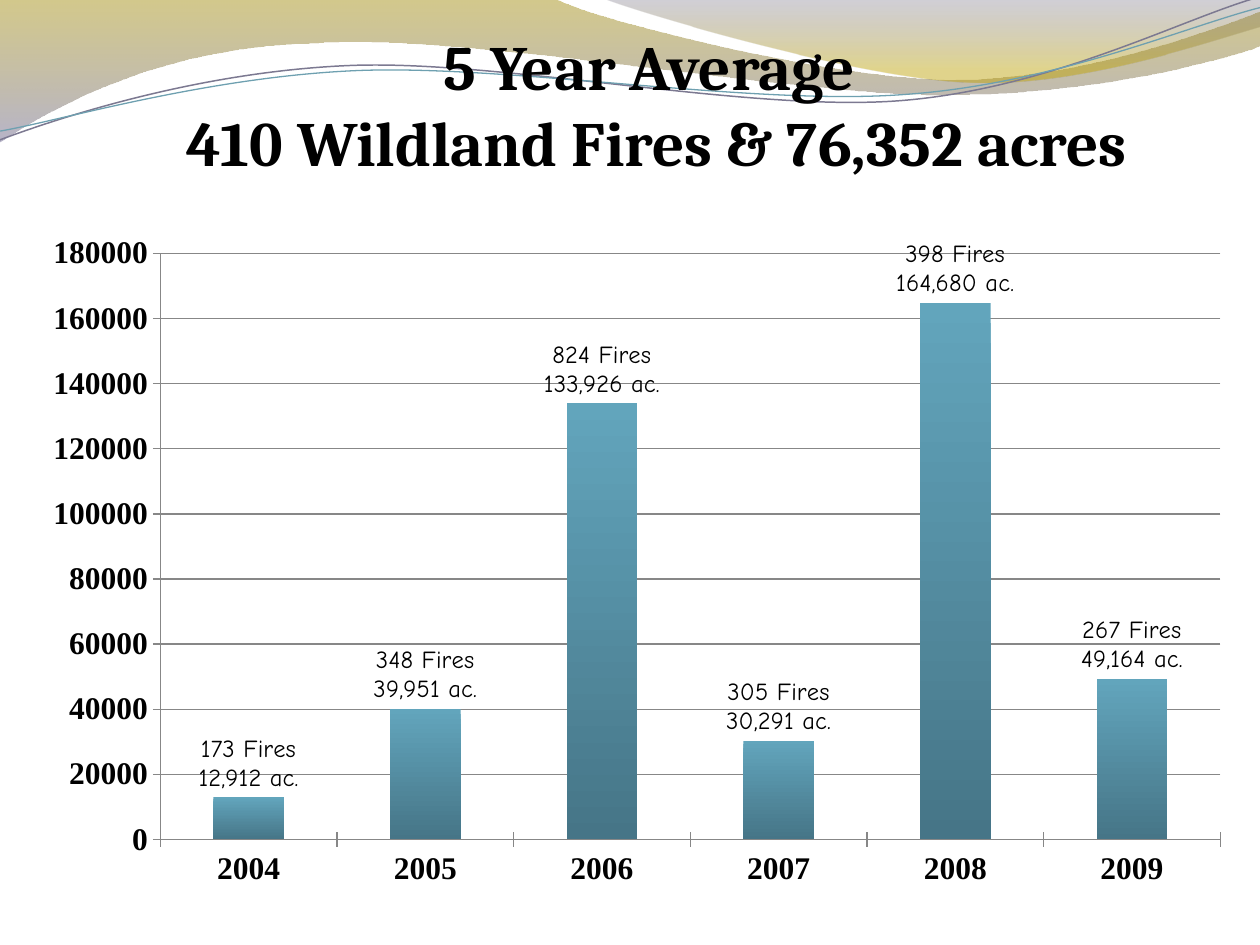
from dataclasses import dataclass
from math import cos, radians, sin

from lxml.etree import SubElement
from pptx import Presentation
from pptx.chart.data import CategoryChartData
from pptx.dml.color import RGBColor
from pptx.enum.chart import XL_CHART_TYPE, XL_LABEL_POSITION, XL_TICK_MARK
from pptx.enum.text import MSO_ANCHOR, MSO_AUTO_SIZE, PP_ALIGN
from pptx.oxml import parse_xml
from pptx.oxml.ns import nsdecls, qn
from pptx.util import Inches, Pt


@dataclass(frozen=True)
class Theme:
    """Colours, fonts and type sizes of the slide."""
    ink: str = "000000"
    outline: str = "4D4D4D"
    teal: str = "6EA0B0"
    violet: str = "7C7991"
    bar: tuple = ((0, "62A5BC", 100), (100, "467587", 100))
    back_wave: tuple = ((0, "9E8700", 45), (100, "7B769C", 55))
    front_wave: tuple = ((0, "66627C", 30), (80, "BDA100", 45))
    title_font: str = "Cambria"
    axis_font: str = "Times New Roman"
    label_font: str = "Comic Neue"
    title_size: int = 36
    axis_size: int = 18
    label_size: int = 14


def assign(target, values):
    """Set every attribute named in a dict."""
    for name, value in values.items():
        setattr(target, name, value)


def turn(point, center, degrees):
    """Rotate a point clockwise around a center."""
    angle = radians(degrees)
    x, y = point[0] - center[0], point[1] - center[1]
    return (center[0] + x * cos(angle) - y * sin(angle),
            center[1] + x * sin(angle) + y * cos(angle))


class SlideBuilder:
    """Draws styled elements on a grid of 10 columns by 7.5 rows."""

    def __init__(self, presentation, theme):
        """Add a blank slide and keep the style."""
        self.theme = theme
        self.unit = presentation.slide_width / 10
        self.slide = presentation.slides.add_slide(presentation.slide_layouts[6])

    def grid(self, *lengths):
        """Turn grid lengths into slide lengths."""
        return [round(length * self.unit) for length in lengths]

    def style_font(self, font, name, size, bold=False):
        """Apply a type style."""
        assign(font, {"name": name, "size": Pt(size), "bold": bold})
        font.color.rgb = RGBColor.from_string(self.theme.ink)

    def gradient(self, fill, stops):
        """Fill from top to bottom with translucent stops."""
        fill.gradient()
        fill.gradient_angle = 270
        for stop, (position, color, _) in zip(fill.gradient_stops, stops):
            stop.position = position / 100
            stop.color.rgb = RGBColor.from_string(color)
        for element, (_, _, opacity) in zip(fill._xPr.iter(qn("a:srgbClr")), stops):
            if opacity < 100:
                SubElement(element, qn("a:alpha")).set("val", str(opacity * 1000))

    def outline(self, start, segments, closed, center=(0, 0), rotation=0):
        """Build an outline of straight and cubic segments."""
        points = [start]
        for segment in segments:
            points += zip(segment[::2], segment[1::2])
        points = [self.grid(*turn(point, center, -rotation)) for point in points]
        builder = self.slide.shapes.build_freeform(*points[0], scale=1.0)
        builder.add_line_segments(points[1:], close=closed)
        shape = builder.convert_to_shape()
        assign(shape, {"rotation": rotation})
        shape.shadow.inherit = False
        corners = iter(list(shape._element.iter(qn("a:lnTo"))))
        for segment in segments:
            corner = next(corners)
            if len(segment) == 6:
                corner.tag = qn("a:cubicBezTo")
                for _ in range(2):
                    extra = next(corners)
                    corner.append(extra[0])
                    extra.getparent().remove(extra)
        return shape

    def wave(self, start, segments, stops):
        """Draw a gradient wave without a line."""
        shape = self.outline(start, segments, True)
        self.gradient(shape.fill, stops)
        shape.line.fill.background()

    def stroke(self, start, segments, center, color, width):
        """Draw a slightly tilted open curve."""
        shape = self.outline(start, segments, False, center, -2.7)
        shape.fill.background()
        shape.line.color.rgb = RGBColor.from_string(color)
        shape.line.width = Pt(width)

    def title(self, lines, box):
        """Write centred, outlined title lines."""
        frame = self.slide.shapes.add_textbox(*self.grid(*box)).text_frame
        assign(frame, {"word_wrap": False, "auto_size": MSO_AUTO_SIZE.SHAPE_TO_FIT_TEXT,
                       "vertical_anchor": MSO_ANCHOR.TOP, "text": "\n".join(lines)})
        for paragraph in frame.paragraphs:
            paragraph.alignment = PP_ALIGN.CENTER
            run = paragraph.runs[0]
            self.style_font(run.font, self.theme.title_font, self.theme.title_size, True)
            run.font._element.insert(0, parse_xml(
                f'<a:ln {nsdecls("a")} w="{Pt(0.9)}"><a:solidFill>'
                f'<a:srgbClr val="{self.theme.outline}"/></a:solidFill></a:ln>'))

    def column_chart(self, records, box, plot_box):
        """Plot acres by year with written labels."""
        data = CategoryChartData()
        data.categories = [year for year, _, _ in records]
        data.add_series("Series 1", [acres for _, acres, _ in records])
        chart = self.slide.shapes.add_chart(
            XL_CHART_TYPE.COLUMN_CLUSTERED, *self.grid(*box), data).chart
        assign(chart, {"has_legend": False, "has_title": False})
        self.style_font(chart.font, self.theme.title_font, self.theme.axis_size)
        for axis, has_grid in ((chart.category_axis, False), (chart.value_axis, True)):
            assign(axis, {"major_tick_mark": XL_TICK_MARK.CROSS, "has_major_gridlines": has_grid})
            self.style_font(axis.tick_labels.font, self.theme.axis_font,
                            self.theme.axis_size, True)
        plot = chart.plots[0]
        assign(plot, {"gap_width": 150, "vary_by_categories": False})
        series = plot.series[0]
        self.gradient(series.format.fill, self.theme.bar)
        label_style = (self.theme.label_font, self.theme.label_size)
        assign(series.data_labels, {"show_value": True,
                                    "position": XL_LABEL_POSITION.OUTSIDE_END})
        self.style_font(series.data_labels.font, *label_style)
        for index, (_, _, text) in enumerate(records):
            label = series.points[index].data_label
            label.text_frame.text = text
            label.position = XL_LABEL_POSITION.OUTSIDE_END
            for paragraph in label.text_frame.paragraphs:
                self.style_font(paragraph.runs[0].font, *label_style)
        self.place_plot(chart, [round(part / whole, 3)
                                for part, whole in zip(plot_box, box[2:] * 2)])

    def place_plot(self, chart, shares):
        """Fix the inner plot area as shares of the chart."""
        area = chart._chartSpace.chart.plotArea
        for layout in area.findall(qn("c:layout")):
            area.remove(layout)
        settings = {"layoutTarget": "inner", "xMode": "edge", "yMode": "edge",
                    **dict(zip("xywh", shares))}
        inside = "".join(f'<c:{name} val="{value}"/>' for name, value in settings.items())
        area.insert(0, parse_xml(f'<c:layout {nsdecls("c")}><c:manualLayout>{inside}'
                                 '</c:manualLayout></c:layout>'))


def main():
    """Build and save the wildfire slide."""
    presentation = Presentation()
    assign(presentation, {"slide_width": Inches(10), "slide_height": Inches(7.5)})
    theme = Theme()
    builder = SlideBuilder(presentation, theme)
    builder.wave((0, 0), [
        (4.4, -0.01), (4.76, 0.17, 6.64, 0.63, 7.58, 0.63), (8.53, 0.63, 9.58, 0.26, 10, 0.09),
        (10.01, 0.36), (9.83, 0.44, 8.7, 0.76, 7.46, 0.75), (6.22, 0.75, 3.82, 0.28, 2.57, 0.34),
        (1.29, 0.36, 0.46, 0.83, -0.01, 1.13)], theme.back_wave)
    builder.wave((4.79, -0.01), [
        (5.09, 0.11, 6.82, 0.62, 7.69, 0.65), (8.56, 0.69, 9.61, 0.32, 10, 0.21), (10, 0)],
        theme.front_wave)
    builder.stroke((0, 1.11), [
        (0.48, 0.93, 1.58, 0.57, 2.77, 0.52), (3.95, 0.47, 5.93, 0.89, 7.13, 0.8),
        (8.33, 0.71, 9.38, 0.15, 9.98, -0.02)], (4.99, 0.57), theme.violet, 0.85)
    builder.stroke((0, 1.04), [
        (0.47, 0.96, 1.64, 0.61, 2.83, 0.56), (4.03, 0.51, 5.97, 0.84, 7.17, 0.75),
        (8.36, 0.67, 9.41, 0.21, 10, 0.06)], (4.99, 0.59), theme.teal, 0.75)
    builder.title(["5 Year Average", " 410 Wildland Fires & 76,352 acres"],
                  (1.17, 0.17, 7.97, 1.31))
    records = [("2004", 12900, "173 Fires\n12,912 ac."), ("2005", 40000, "348 Fires\n39,951 ac."),
               ("2006", 133900, "824 Fires\n133,926 ac."), ("2007", 30300, "305 Fires\n30,291 ac."),
               ("2008", 164700, "398 Fires\n164,680 ac."), ("2009", 49200, "267 Fires\n49,164 ac.")]
    builder.column_chart(records, (0.17, 1.5, 9.67, 5.75), (1.1, 0.51, 8.41, 4.65))
    presentation.save("out.pptx")


if __name__ == "__main__":
    main()
